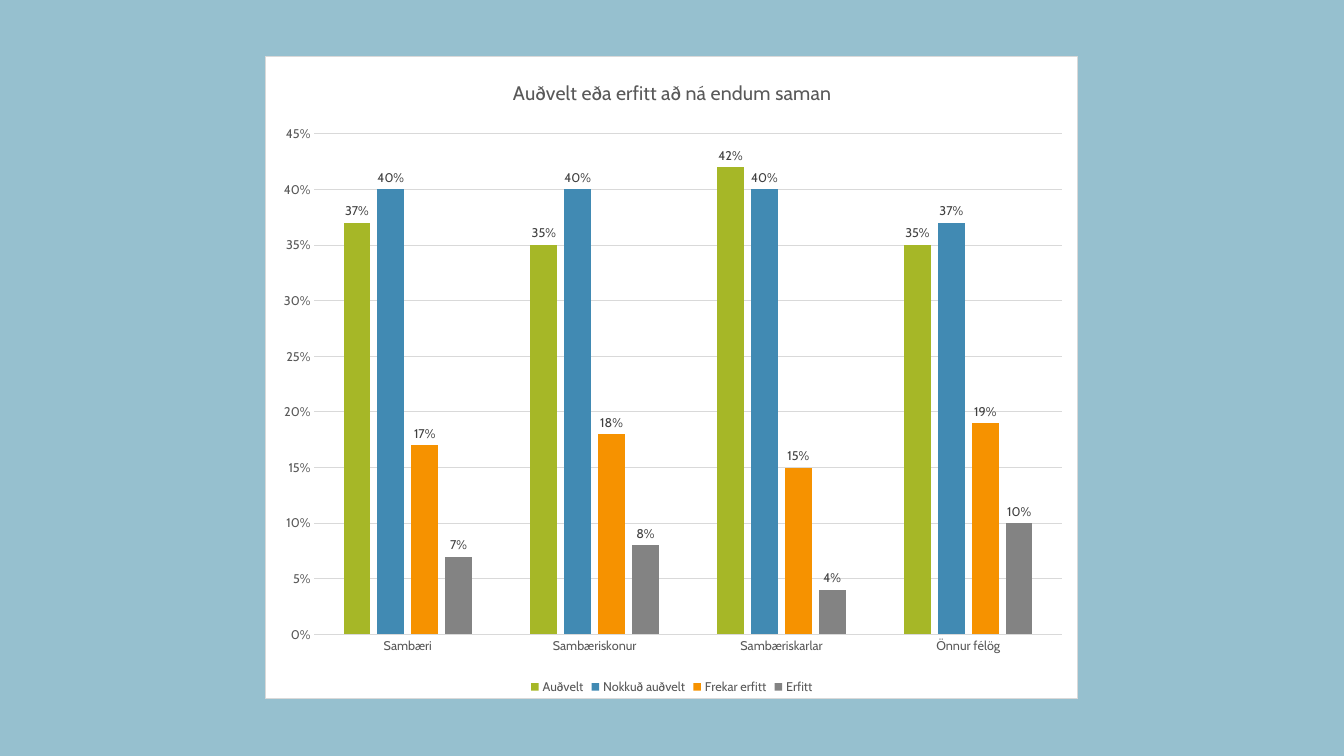
import pptx
import pptx.chart.data
import pptx.dml.color
import pptx.enum.chart
import pptx.oxml
import pptx.oxml.ns
import pptx.util
from pptx.util import Cm, Pt


def rgb(hex_code):
    return pptx.dml.color.RGBColor.from_string(hex_code)


def set_layout(parent, index, **fractions):
    """Place a chart part by fractions of the chart area."""
    old = parent.find(pptx.oxml.ns.qn("c:layout"))
    if old is not None:
        parent.remove(old)
    target = '<c:layoutTarget val="inner"/>' if "w" in fractions else ""
    modes = '<c:xMode val="edge"/><c:yMode val="edge"/>'
    sizes = "".join(f'<c:{k} val="{v}"/>' for k, v in fractions.items())
    parent.insert(index, pptx.oxml.parse_xml(
        f'<c:layout {pptx.oxml.ns.nsdecls("c")}><c:manualLayout>'
        f"{target}{modes}{sizes}</c:manualLayout></c:layout>"))


FONT = "Cabin"
GREY = "595959"
LINE = "D9D9D9"

prs = pptx.Presentation()
prs.slide_width, prs.slide_height = Cm(33.87), Cm(19.05)
s = prs.slides.add_slide(prs.slide_layouts[6])
s.background.fill.solid()
s.background.fill.fore_color.rgb = rgb("96C0CF")

# Data
series = [
    ("Auðvelt", "A6B727", (0.37, 0.35, 0.42, 0.35)),
    ("Nokkuð auðvelt", "418AB3", (0.40, 0.40, 0.40, 0.37)),
    ("Frekar erfitt", "F69200", (0.17, 0.18, 0.15, 0.19)),
    ("Erfitt", "838383", (0.07, 0.08, 0.04, 0.10)),
]
data = pptx.chart.data.CategoryChartData(number_format="0%")
data.categories = ["Sambæri", "Sambæriskonur", "Sambæriskarlar", "Önnur félög"]
for name, color, values in series:
    data.add_series(name, values)

# Chart
chart = s.shapes.add_chart(
    pptx.enum.chart.XL_CHART_TYPE.COLUMN_CLUSTERED,
    Cm(6.68), Cm(1.42), Cm(20.5), Cm(16.2), data).chart
chart.font.name = FONT
chart.font.size = Pt(10)

# White chart area with a thin border
area = pptx.oxml.parse_xml(
    f'<c:spPr {pptx.oxml.ns.nsdecls("c", "a")}>'
    '<a:solidFill><a:srgbClr val="FFFFFF"/></a:solidFill>'
    f'<a:ln w="9525"><a:solidFill><a:srgbClr val="{LINE}"/></a:solidFill></a:ln>'
    "</c:spPr>")
chart.element.find(pptx.oxml.ns.qn("c:txPr")).addprevious(area)

# Title
chart.has_title = True
tf = chart.chart_title.text_frame
tf.text = "Auðvelt eða erfitt að ná endum saman"
r = tf.paragraphs[0].runs[0]
r.font.name, r.font.size, r.font.bold = FONT, Pt(14), False
r.font.color.rgb = rgb(GREY)
set_layout(chart.chart_title._element, 1, x=0.3, y=0.03)

# Axes and legend
cat_axis, val_axis = chart.category_axis, chart.value_axis
chart.has_legend = True
chart.legend.position = pptx.enum.chart.XL_LEGEND_POSITION.BOTTOM
chart.legend.include_in_layout = False
for font in (cat_axis.tick_labels.font, val_axis.tick_labels.font, chart.legend.font):
    font.name, font.size = FONT, Pt(9)
    font.color.rgb = rgb(GREY)
for axis in (cat_axis, val_axis):
    axis.major_tick_mark = pptx.enum.chart.XL_TICK_MARK.NONE
    axis.minor_tick_mark = pptx.enum.chart.XL_TICK_MARK.NONE
for line in (cat_axis.format.line, val_axis.major_gridlines.format.line):
    line.color.rgb = rgb(LINE)
    line.width = Pt(0.75)
val_axis.format.line.fill.background()
val_axis.minimum_scale, val_axis.maximum_scale = 0, 0.45
val_axis.major_unit = 0.05
val_axis.tick_labels.number_format = "0%"
val_axis.tick_labels.number_format_is_linked = False

# Columns and their labels
plot = chart.plots[0]
plot.gap_width, plot.overlap = 219, -27
plot.vary_by_categories = False
set_layout(plot._element.getparent(), 0, x=0.06, y=0.12, w=0.92, h=0.78)
for column, (name, color, values) in zip(plot.series, series):
    column.format.fill.solid()
    column.format.fill.fore_color.rgb = rgb(color)
    labels = column.data_labels
    labels.show_value = True
    labels.position = pptx.enum.chart.XL_LABEL_POSITION.OUTSIDE_END
    labels.number_format = "0%"
    labels.number_format_is_linked = False
    labels.font.name, labels.font.size = FONT, Pt(9)
    labels.font.color.rgb = rgb("404040")

prs.save("out.pptx")
